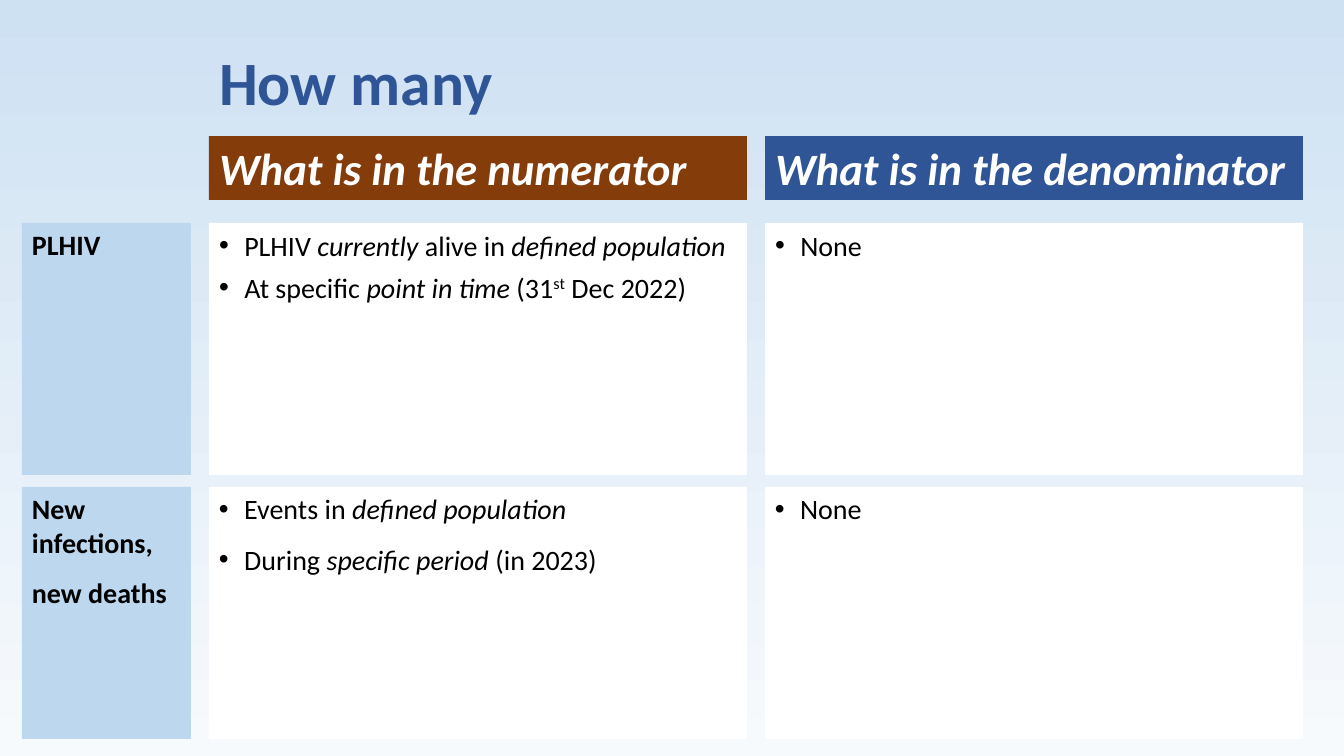
from lxml.etree import SubElement
from pptx import Presentation
from pptx.dml.color import RGBColor
from pptx.enum.shapes import MSO_SHAPE as Shape
from pptx.enum.text import MSO_ANCHOR as Anchor, MSO_AUTO_SIZE as AutoSize, PP_ALIGN as Align
from pptx.oxml.ns import qn
from pptx.util import Emu, Pt

SCALE = 914400 / 100.8
COLOURS = {
    "sky": "CEE1F2", "mist": "F7FAFD", "blue": "2F5597", "brown": "843C0B",
    "label": "BDD7EE", "white": "FFFFFF", "black": "000000",
}
LABEL_LEFT, LABEL_WIDTH = 22, 169
NUMERATOR_LEFT, DENOMINATOR_LEFT, COLUMN_WIDTH = 209, 765, 538
HEADER_TOP, HEADER_HEIGHT = 136, 64
ROW_TOPS, ROW_HEIGHT = (223, 487), 252


def px(length):
    return Emu(round(length * SCALE))


def colour(name):
    return RGBColor.from_string(COLOURS[name])


class Slide:
    font = "Calibri"

    def __init__(self, deck):
        self.page = deck.slides.add_slide(deck.slide_layouts.get_by_name("Comparison"))

    def background(self, bottom, top):
        fill = self.page.background.fill
        fill.gradient()
        fill.gradient_angle = 90
        for stop, name in zip(fill.gradient_stops, (bottom, top)):
            stop.color.rgb = colour(name)

    def placeholder(self, index, area):
        box = self.page.placeholders[index]
        box.left, box.top, box.width, box.height = map(px, area)
        return box

    def rectangle(self, area):
        box = self.page.shapes.add_shape(Shape.RECTANGLE, *map(px, area))
        box.shadow.inherit = False
        return box

    def paint(self, box, fill):
        box.fill.solid()
        box.fill.fore_color.rgb = colour(fill)
        box.line.fill.background()

    def set_text(self, box, paragraphs, size, ink, bold=False, anchor=Anchor.TOP,
                 leading=1.0, before=0, after=0, bullets=False):
        frame = box.text_frame
        frame.word_wrap = True
        frame.auto_size = AutoSize.NONE
        frame.vertical_anchor = anchor
        for number, spans in enumerate(paragraphs):
            para = frame.add_paragraph() if number else frame.paragraphs[0]
            para.alignment = Align.LEFT
            para.line_spacing = leading
            para.space_before, para.space_after = Pt(before), Pt(after)
            if bullets:
                self.bullet(para)
            for text, style in spans:
                span = para.add_run()
                span.text = text
                span.font.name, span.font.size = self.font, Pt(size)
                span.font.bold, span.font.italic = bold, style == "italic"
                span.font.color.rgb = colour(ink)
                if style == "super":
                    span.font._element.set("baseline", "30000")

    def bullet(self, para):
        properties = para._p.get_or_add_pPr()
        properties.set("marL", "228600")
        properties.set("indent", "-228600")
        SubElement(properties, qn("a:buFont")).set("typeface", "Arial")
        SubElement(properties, qn("a:buChar")).set("char", "•")

    def title(self, text, area):
        box = self.placeholder(0, area)
        self.set_text(box, [[(text, "")]], 44, "blue", bold=True,
                      anchor=Anchor.MIDDLE, leading=0.9)

    def header(self, index, text, left, fill):
        box = self.placeholder(index, (left, HEADER_TOP, COLUMN_WIDTH, HEADER_HEIGHT))
        self.paint(box, fill)
        self.set_text(box, [[(text, "italic")]], 32, "white", bold=True,
                      anchor=Anchor.BOTTOM, leading=0.9, before=10)

    def label(self, lines, top):
        box = self.rectangle((LABEL_LEFT, top, LABEL_WIDTH, ROW_HEIGHT))
        self.paint(box, "label")
        self.set_text(box, [[(line, "")] for line in lines], 20, "black", bold=True, after=12)

    def cell(self, paragraphs, left, top, after=12, index=None):
        area = (left, top, COLUMN_WIDTH, ROW_HEIGHT)
        box = self.rectangle(area) if index is None else self.placeholder(index, area)
        self.paint(box, "white")
        self.set_text(box, paragraphs, 20, "black", after=after, bullets=True)


def main():
    deck = Presentation()
    deck.slide_width, deck.slide_height = px(1344), px(756)
    slide = Slide(deck)
    slide.background("mist", "sky")
    slide.title("How many", (NUMERATOR_LEFT, 40, 1042, 91))
    slide.header(1, "What is in the numerator", NUMERATOR_LEFT, "brown")
    slide.header(3, "What is in the denominator", DENOMINATOR_LEFT, "blue")

    people = [
        [("PLHIV ", ""), ("currently", "italic"), (" alive in ", ""),
         ("defined population", "italic")],
        [("At specific ", ""), ("point in time ", "italic"), ("(31", ""),
         ("st", "super"), (" Dec 2022)", "")],
    ]
    events = [
        [("Events in ", ""), ("defined population", "italic")],
        [("During ", ""), ("specific period ", "italic"), ("(in 2023)", "")],
    ]
    none = [[("None", "")]]
    people_top, events_top = ROW_TOPS
    slide.label(["PLHIV"], people_top)
    slide.cell(people, NUMERATOR_LEFT, people_top, after=6, index=2)
    slide.cell(none, DENOMINATOR_LEFT, people_top, index=4)
    slide.label(["New infections,", "new deaths"], events_top)
    slide.cell(events, NUMERATOR_LEFT, events_top)
    slide.cell(none, DENOMINATOR_LEFT, events_top)
    deck.save("out.pptx")


if __name__ == "__main__":
    main()
